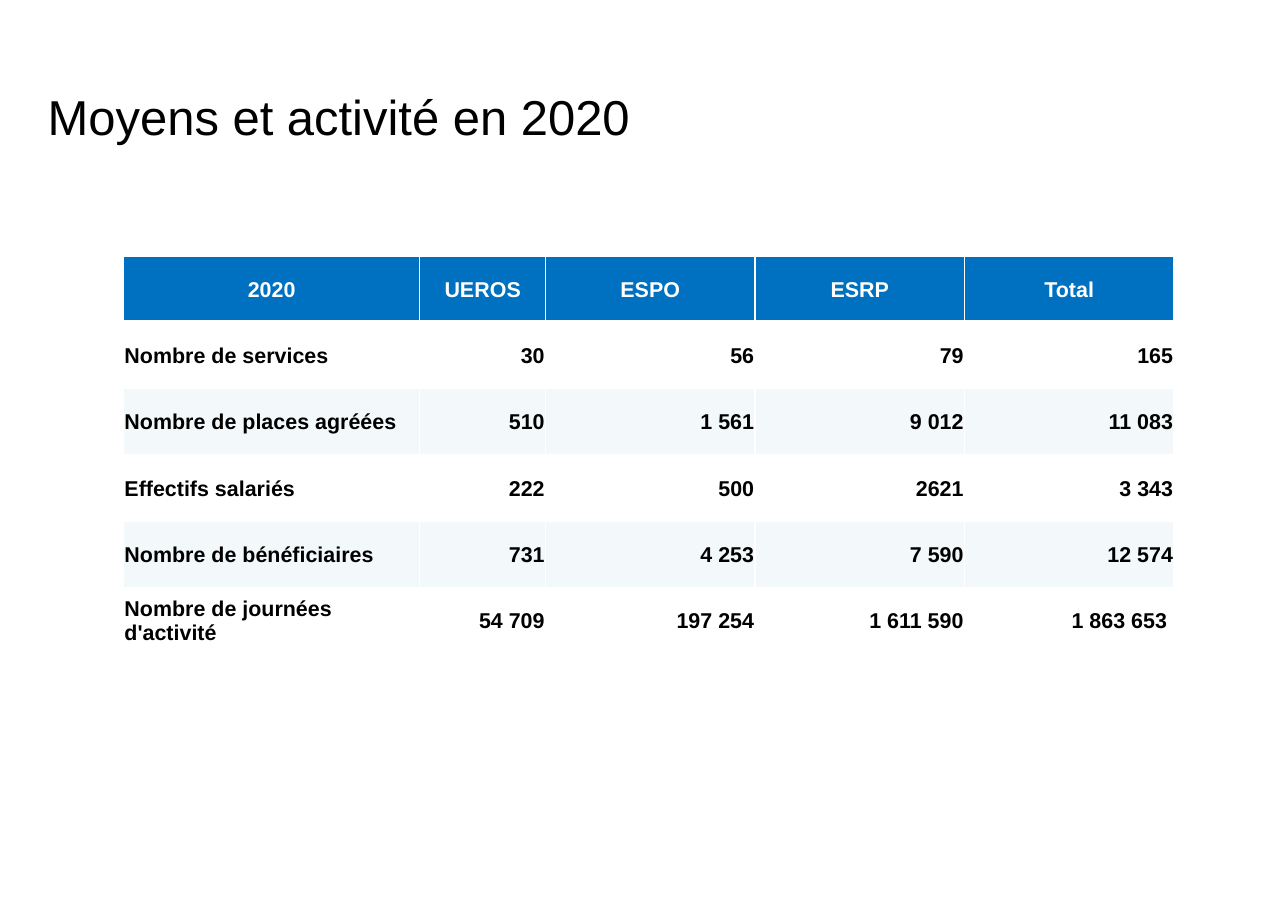
from lxml import etree
from pptx import Presentation
from pptx.dml.color import RGBColor
from pptx.enum.text import MSO_ANCHOR, MSO_AUTO_SIZE, PP_ALIGN
from pptx.oxml.ns import qn
from pptx.util import Cm, Pt

LEFT, CENTER, RIGHT = PP_ALIGN.LEFT, PP_ALIGN.CENTER, PP_ALIGN.RIGHT
MIDDLE = MSO_ANCHOR.MIDDLE
GROW = MSO_AUTO_SIZE.SHAPE_TO_FIT_TEXT

BLACK = RGBColor(0x00, 0x00, 0x00)
WHITE = RGBColor(0xFF, 0xFF, 0xFF)
BLUE = RGBColor(0x00, 0x70, 0xC0)
PALE = RGBColor(0xF3, 0xF9, 0xFA)

WIDTHS = [6.83, 2.9, 4.83, 4.83, 4.83]
HEIGHT = 1.53
ROWS = [
    ["2020", "UEROS", "ESPO", "ESRP", "Total"],
    ["Nombre de services", "30", "56", "79", "165"],
    ["Nombre de places agréées", "510", "1 561", "9 012", "11 083"],
    ["Effectifs salariés", "222", "500", "2621", "3 343"],
    ["Nombre de bénéficiaires", "731", "4 253", "7 590", "12 574"],
    ["Nombre de journées d'activité", "54 709", "197 254", "1 611 590", "1 863 653 "],
]


class Page:
    """Holds the text style and the current slide."""

    def __init__(self, slide, font="Arial"):
        self.slide = slide
        self.font = font

    def label(self, frame, text, size, color, bold=False, align=LEFT):
        para = frame.paragraphs[0]
        para.alignment = align
        run = para.add_run()
        run.text = text
        font = run.font
        font.name, font.size, font.bold = self.font, Pt(size), bold
        font.color.rgb = color

    def title(self, text, left, top, width, height):
        box = self.slide.shapes.add_textbox(Cm(left), Cm(top), Cm(width), Cm(height))
        frame = box.text_frame
        frame.word_wrap = False
        frame.auto_size = GROW
        frame.margin_left = frame.margin_right = Cm(0.28)
        frame.margin_top = frame.margin_bottom = Cm(0.15)
        self.label(frame, text, 32, BLACK)

    def edge(self, cell, sides, color):
        props = cell._tc.get_or_add_tcPr()
        for side, width in sides.items():
            line = etree.SubElement(props, qn(f"a:ln{side}"), w=str(Pt(width)))
            fill = etree.SubElement(line, qn("a:solidFill"))
            etree.SubElement(fill, qn("a:srgbClr"), val=str(color))

    def cell(self, cell, text, row, col):
        head = row == 0
        cell.vertical_anchor = MIDDLE
        cell.margin_left = cell.margin_right = cell.margin_top = Cm(0.02)
        cell.margin_bottom = 0
        # Borders go before the fill
        self.edge(cell, {"L": 1, "R": 1, "T": 3 if row == 1 else 1, "B": 3 if head else 1}, WHITE)
        if head or row % 2 == 0:
            cell.fill.solid()
            cell.fill.fore_color.rgb = BLUE if head else PALE
        else:
            cell.fill.background()
        align = CENTER if head else RIGHT if col else LEFT
        self.label(cell.text_frame, text, 14, WHITE if head else BLACK, True, align)

    def table(self, rows, left, top, widths, height):
        table = self.slide.shapes.add_table(
            len(rows), len(widths), Cm(left), Cm(top),
            Cm(sum(widths)), Cm(height * len(rows))).table
        for col, width in zip(table.columns, widths):
            col.width = Cm(width)
        for i, texts in enumerate(rows):
            table.rows[i].height = Cm(height)
            for j, text in enumerate(texts):
                self.cell(table.cell(i, j), text, i, j)


def main():
    deck = Presentation()
    deck.slide_width, deck.slide_height = Cm(29.7), Cm(21)
    page = Page(deck.slides.add_slide(deck.slide_layouts[6]))

    # Heading
    page.title("Moyens et activité en 2020", 0.82, 1.85, 14.12, 1.65)

    # Figures by type of service
    page.table(ROWS, 2.85, 5.9, WIDTHS, HEIGHT)

    deck.save("out.pptx")


if __name__ == "__main__":
    main()
